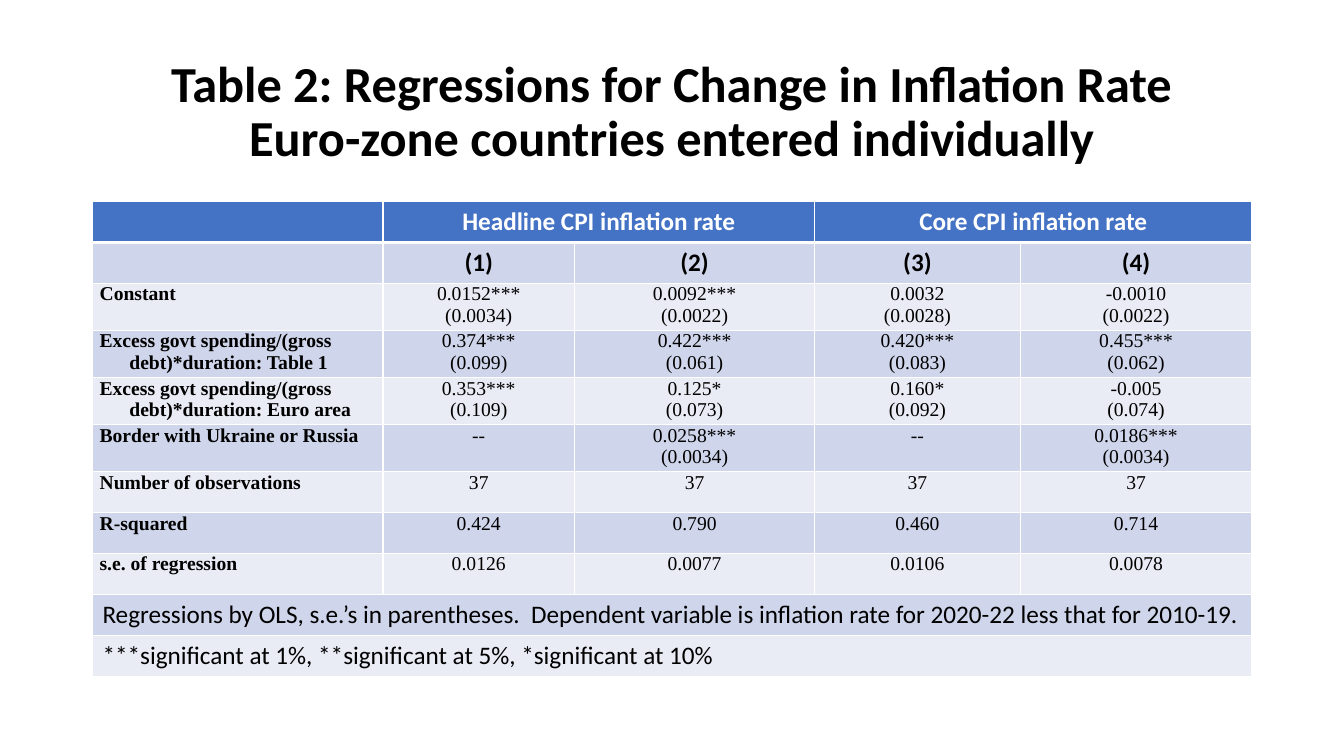
import pptx
import pptx.util
import pptx.dml.color
import pptx.enum.text
import pptx.oxml
import pptx.oxml.ns
from pptx.util import Cm, Pt

COLORS = {"header": "4472C4", "dark": "CFD5EA", "light": "E9EBF5",
          "white": "FFFFFF", "black": "000000"}
CENTER = pptx.enum.text.PP_ALIGN.CENTER
LEFT = pptx.enum.text.PP_ALIGN.LEFT


def style(p, size, name, color, bold, align):
    p.alignment = align
    p.font.size = Pt(size)
    p.font.name = name
    p.font.bold = bold
    p.font.color.rgb = pptx.dml.color.RGBColor.from_string(COLORS[color])


def add_borders(cell, bottom):
    """Draw white lines round the cell, 1 pt wide except at the bottom."""
    tcPr = cell._tc.get_or_add_tcPr()
    for i, (side, width) in enumerate(zip("LRTB", (1, 1, 1, bottom))):
        tcPr.insert(i, pptx.oxml.parse_xml(
            f'<a:ln{side} {pptx.oxml.ns.nsdecls("a")} w="{Pt(width)}"><a:solidFill>'
            f'<a:srgbClr val="{COLORS["white"]}"/></a:solidFill></a:ln{side}>'))


prs = pptx.Presentation()
prs.slide_width, prs.slide_height = Cm(33.87), Cm(19.05)
s = prs.slides.add_slide(prs.slide_layouts[6])

title = s.shapes.add_textbox(Cm(2.33), Cm(1.01), Cm(29.21), Cm(3.68))
tf = title.text_frame
tf.word_wrap = True
tf.vertical_anchor = pptx.enum.text.MSO_ANCHOR.MIDDLE
tf.text = ("Table 2: Regressions for Change in Inflation Rate\v"
           "Euro-zone countries entered individually")
style(tf.paragraphs[0], 36, "Calibri", "black", True, CENTER)
tf.paragraphs[0].line_spacing = 0.9

rows = [
    ["", "Headline CPI inflation rate", "", "Core CPI inflation rate", ""],
    ["", "(1)", "(2)", "(3)", "(4)"],
    ["Constant", "0.0152***\n(0.0034)", "0.0092***\n(0.0022)",
     "0.0032\n(0.0028)", "-0.0010\n(0.0022)"],
    ["Excess govt spending/(gross\ndebt)*duration: Table 1", "0.374***\n(0.099)",
     "0.422***\n(0.061)", "0.420***\n(0.083)", "0.455***\n(0.062)"],
    ["Excess govt spending/(gross\ndebt)*duration: Euro area", "0.353***\n(0.109)",
     "0.125*\n(0.073)", "0.160*\n(0.092)", "-0.005\n(0.074)"],
    ["Border with Ukraine or Russia", "--", "0.0258***\n(0.0034)",
     "--", "0.0186***\n(0.0034)"],
    ["Number of observations", "37", "37", "37", "37"],
    ["R-squared", "0.424", "0.790", "0.460", "0.714"],
    ["s.e. of regression", "0.0126", "0.0077", "0.0106", "0.0078"],
    ["Regressions by OLS, s.e.’s in parentheses.  Dependent variable is "
     "inflation rate for 2020-22 less that for 2010-19.", "", "", "", ""],
    ["***significant at 1%, **significant at 5%, *significant at 10%", "", "", "", ""],
]
widths = [7.32, 4.83, 6.05, 5.18, 5.84]
row_height = 1.03
first_note = 9

table = s.shapes.add_table(len(rows), len(widths), Cm(2.33), Cm(5.08),
                           Cm(sum(widths)), Cm(row_height * len(rows))).table
for column, width in zip(table.columns, widths):
    column.width = Cm(width)

for r, texts in enumerate(rows):
    table.rows[r].height = Cm(row_height)
    fill = "header" if r == 0 else "dark" if r % 2 else "light"
    is_result = 2 <= r < first_note
    for c, text in enumerate(texts):
        cell = table.cell(r, c)
        cell.fill.solid()
        cell.fill.fore_color.rgb = pptx.dml.color.RGBColor.from_string(COLORS[fill])
        add_borders(cell, 3 if r == 0 else 1)
        if is_result:
            cell.margin_left = cell.margin_right = Cm(0.18)
            cell.margin_top = cell.margin_bottom = 0
        cell.text = text
        for i, p in enumerate(cell.text_frame.paragraphs):
            align = CENTER if c else LEFT
            if is_result:
                style(p, 14, "Times New Roman", "black", c == 0, align)
            else:
                style(p, 18, "Calibri", "black" if r else "white", r < 2, align)
            if c == 0 and i > 0:
                p._p.get_or_add_pPr().set("marL", str(Cm(0.75)))

for r, first, last in [(0, 1, 2), (0, 3, 4), (first_note, 0, 4), (first_note + 1, 0, 4)]:
    table.cell(r, first).merge(table.cell(r, last))

prs.save("out.pptx")
